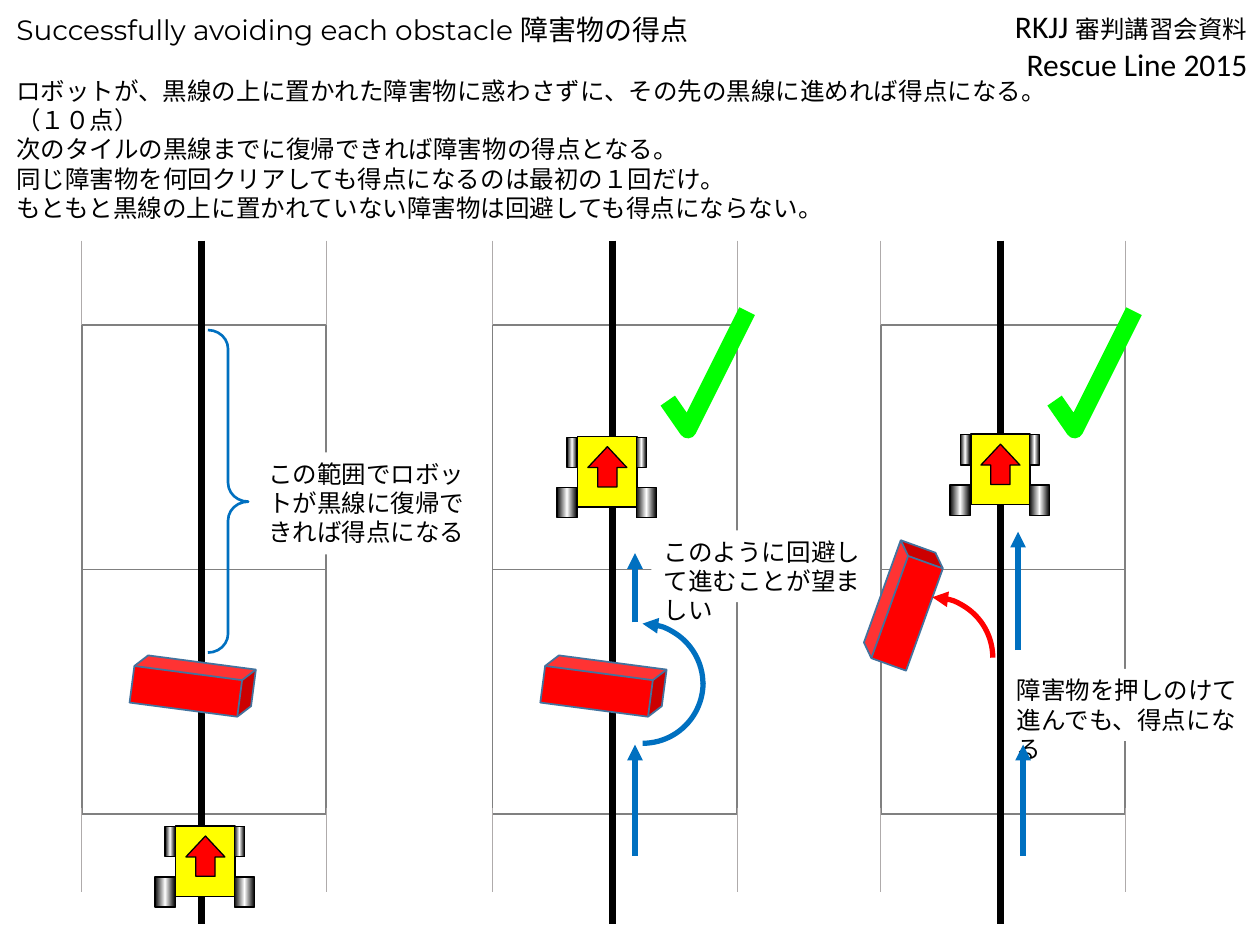
from itertools import pairwise

from lxml.etree import SubElement
from pptx import Presentation
from pptx.dml.color import RGBColor
from pptx.enum.shapes import MSO_CONNECTOR, MSO_SHAPE
from pptx.enum.text import MSO_ANCHOR, MSO_AUTO_SIZE, PP_ALIGN
from pptx.oxml.ns import qn
from pptx.util import Inches, Pt

BLUE, RED, GREY = "0070C0", "FF0000", "AFABAB"
LANES = (0.65, 3.91, 6.99)
TILE = 1.94


def paint(target, color):
    target.solid()
    target.fore_color.rgb = RGBColor.from_string(color)


def stroke(item, color, width):
    paint(item.line.fill, color)
    item.line.width = Pt(width)


def mark(item, tag, **attrs):
    SubElement(item.element.spPr.find(qn("a:ln")), qn(tag), **attrs)


def text(item, *rows, size=14, font="Calibri", align=PP_ALIGN.LEFT):
    frame = item.text_frame
    frame.word_wrap = True
    frame.auto_size = MSO_AUTO_SIZE.NONE
    frame.vertical_anchor = MSO_ANCHOR.TOP
    for i, row in enumerate(rows):
        para = frame.add_paragraph() if i else frame.paragraphs[0]
        para.alignment = align
        parts = [(row, size)] if isinstance(row, str) else row
        for words, points in parts:
            run = para.add_run()
            run.text = words
            run.font.name = font
            run.font.size = Pt(points)
            run.font.color.rgb = RGBColor.from_string("000000")


def box(home, kind, x, y, w, h, fill=None, line=None, width=1, turn=0, adj=()):
    item = home.add_shape(kind, Inches(x), Inches(y), Inches(w), Inches(h))
    item.shadow.inherit = False
    item.rotation = turn
    for i, value in enumerate(adj):
        item.adjustments[i] = value
    if fill:
        paint(item.fill, fill)
    else:
        item.fill.background()
    if line:
        stroke(item, line, width)
    else:
        item.line.fill.background()
    return item


def line(home, x, y, end, color, width, tip=False):
    item = home.add_connector(
        MSO_CONNECTOR.STRAIGHT, Inches(x), Inches(y), Inches(x), Inches(end))
    stroke(item, color, width)
    SubElement(item.element.spPr, qn("a:effectLst"))
    if tip:
        mark(item, "a:tailEnd", type="triangle")


def lane(home, x):
    for y in (4.52, 4.52 - TILE):
        box(home, MSO_SHAPE.RECTANGLE, x, y, TILE, TILE, "FFFFFF", "808080")
    for start, end in pairwise((1.91, 4.52, 5.86, 7.33)):
        line(home, x + 0.95, start, end, "000000", 4)
    for side in (x, x + TILE):
        for start in (1.91, 6.41):
            line(home, side, start, start + 0.67, GREY, 0.5)


def wheel(home, x, y, wide):
    item = box(home, MSO_SHAPE.RECTANGLE, x, y, 0.24, wide,
               line="000000", width=0.75, turn=90)
    item.fill.gradient()
    item.fill.gradient_angle = 0
    grad = item.element.spPr.find(qn("a:gradFill"))
    grad.set("rotWithShape", "0")
    stops = grad.find(qn("a:gsLst"))
    for stop in list(stops):
        stops.remove(stop)
    for spot, color in ((0, "080808"), (50, "FFFFFF"), (100, "000000")):
        stop = SubElement(stops, qn("a:gs"), pos=str(spot * 1000))
        SubElement(stop, qn("a:srgbClr"), val=color)


def robot(home, x, y):
    group = home.add_group_shape().shapes
    box(group, MSO_SHAPE.RECTANGLE, x, y, 0.56, 0.47, "FFFF00", "000000", 0.75, 90)
    for dx, dy, wide in ((-0.12, 0.04, 0.08), (0.43, 0.04, 0.08),
                         (-0.16, 0.4, 0.16), (0.47, 0.4, 0.16)):
        wheel(group, x + dx, y + dy, wide)
    box(group, MSO_SHAPE.LEFT_ARROW, x + 0.12, y + 0.04, 0.32, 0.31,
        RED, "000000", 0.75, 90, (0.492, 0.536))


def block(home, x, y, turn):
    box(home, MSO_SHAPE.CUBE, x, y, 0.96, 0.39, RED, "43739E", 1, turn)


def arc(home, x, y, color, turn=0, tip=True):
    item = box(home, MSO_SHAPE.ARC, x, y, 0.96, 0.96, None, color, 3, turn)
    if tip:
        mark(item, "a:headEnd", type="triangle")


def check(home, x, y):
    path = home.build_freeform(Inches(x), Inches(y + 0.71))
    path.add_line_segments(
        [(Inches(x + 0.16), Inches(y + 0.94)), (Inches(x + 0.63), Inches(y))],
        close=False)
    item = path.convert_to_shape()
    item.shadow.inherit = False
    item.fill.background()
    stroke(item, "00FF00", 10)
    mark(item, "a:round")


def label(home, x, y, w, h, words):
    text(box(home, MSO_SHAPE.RECTANGLE, x, y, w, h, "FFFFFF"), words)


def area(home, x, y, w, h):
    return home.add_textbox(Inches(x), Inches(y), Inches(w), Inches(h))


def main():
    deck = Presentation()
    deck.slide_width, deck.slide_height = Inches(10), Inches(7.5)
    slide = deck.slides.add_slide(deck.slide_layouts[5])
    home = slide.shapes

    title = home.title
    title.left, title.top = Inches(0.03), Inches(0.05)
    title.width, title.height = Inches(6.6), Inches(0.4)
    text(title, "Successfully avoiding each obstacle 障害物の得点",
         size=16, font="Montserrat")
    text(area(home, 6.69, 0.01, 3.31, 0.71),
         [("RKJJ ", 18), ("審判講習会資料", 14)], "Rescue Line 2015",
         size=18, align=PP_ALIGN.RIGHT)
    text(area(home, 0.03, 0.55, 8.56, 1.25),
         "ロボットが、黒線の上に置かれた障害物に惑わさずに、その先の黒線に進めれば得点になる。（１０点）",
         "次のタイルの黒線までに復帰できれば障害物の得点となる。",
         "同じ障害物を何回クリアしても得点になるのは最初の１回だけ。",
         "もともと黒線の上に置かれていない障害物は回避しても得点にならない。",
         font="Arial")

    for x in LANES:
        lane(home, x)

    brace = box(home, MSO_SHAPE.LEFT_BRACE, 1.65, 2.62, 0.32, 2.56,
                line=BLUE, width=1.5, adj=(0.467, 0.532))
    brace.element.spPr.find(qn("a:xfrm")).set("flipH", "1")

    label(home, 2.03, 3.59, 1.8, 0.81, "この範囲でロボットが黒線に復帰できれば得点になる")
    label(home, 5.17, 4.21, 1.8, 0.57, "このように回避して進むことが望ましい")
    label(home, 7.97, 5.31, 1.99, 0.57, "障害物を押しのけて進んでも、得点になる")

    for x, y, turn in ((1.05, 5.25, 7.5), (4.31, 5.25, 7.5), (6.69, 4.61, 289.8)):
        block(home, x, y, turn)
    arc(home, 4.62, 4.95, BLUE)
    arc(home, 4.62, 4.94, BLUE, 90, False)
    arc(home, 6.92, 4.74, RED)
    for x, start, end in ((5.04, 6.79, 5.91), (5.04, 4.94, 4.39),
                          (8.12, 6.79, 5.91), (8.08, 5.16, 4.22)):
        line(home, x, start, end, BLUE, 3, True)
    for x, y in ((1.35, 6.6), (4.54, 3.51), (7.66, 3.49)):
        robot(home, x, y)
    for x in (5.3, 8.37):
        check(home, x, 2.47)

    deck.save("out.pptx")


if __name__ == "__main__":
    main()
